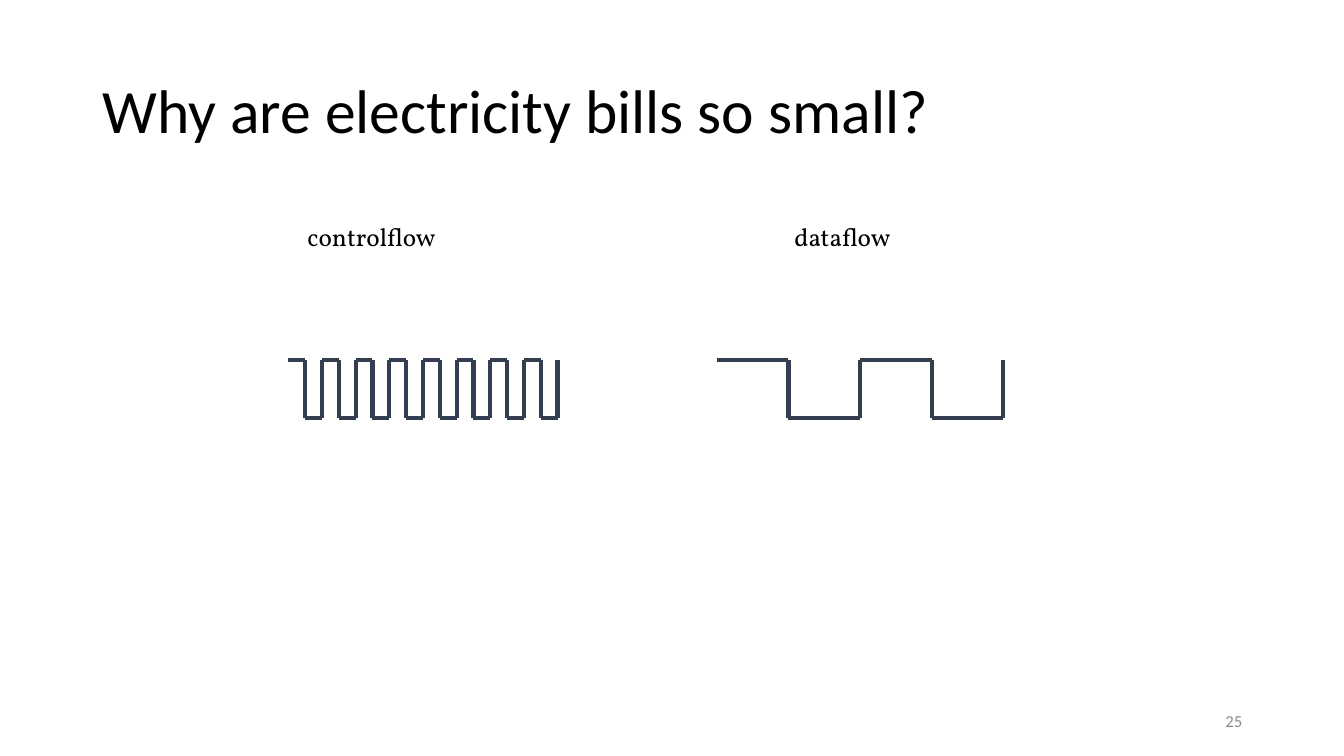
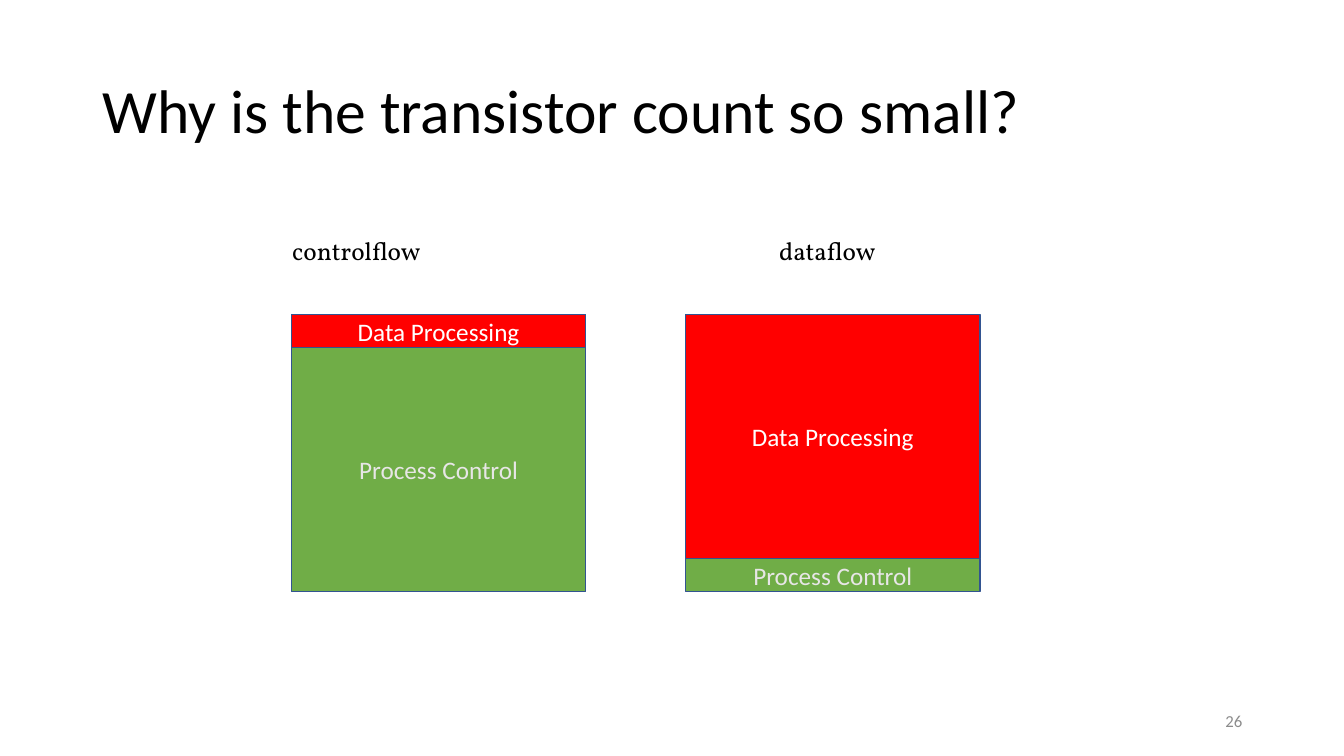
import pptx
import pptx.util
import pptx.dml.color
import pptx.enum.shapes
import pptx.enum.text
import pptx.oxml

Inches = pptx.util.Inches
Pt = pptx.util.Pt
ALIGN = pptx.enum.text.PP_ALIGN
ANCHOR = pptx.enum.text.MSO_ANCHOR

COLOURS = {
    "title": "000000",
    "label": "000000",
    "number": "8C8C8C",
    "wave": "333F50",
    "outline": "325491",
    "data": "FF0000",
    "data text": "FFFFFF",
    "control": "70AD47",
    "control text": "E7E6E6",
}
COLOURS = {name: pptx.dml.color.RGBColor.from_string(value) for name, value in COLOURS.items()}

STYLES = {
    "title": {
        "frame": {"vertical_anchor": ANCHOR.MIDDLE},
        "para": {"line_spacing": 0.9},
        "font": {"name": "Calibri", "size": Pt(44)},
    },
    "label": {
        "frame": {"vertical_anchor": ANCHOR.TOP},
        "para": {"alignment": ALIGN.LEFT},
        "font": {"name": "Vollkorn", "size": Pt(18)},
    },
    "number": {
        "frame": {"vertical_anchor": ANCHOR.MIDDLE},
        "para": {"alignment": ALIGN.RIGHT},
        "font": {"name": "Calibri", "size": Pt(12)},
    },
    "block": {
        "frame": {"vertical_anchor": ANCHOR.MIDDLE},
        "para": {"alignment": ALIGN.CENTER},
        "font": {"name": "Calibri", "size": Pt(18)},
    },
}


def write_text(box, text, style, colour):
    frame = box.text_frame
    frame.word_wrap = True
    para = frame.paragraphs[0]
    span = para.add_run()
    span.text = text
    for part, target in (("frame", frame), ("para", para), ("font", span.font)):
        for attribute, value in STYLES[style][part].items():
            setattr(target, attribute, value)
    span.font.color.rgb = COLOURS[colour]


def add_text(page, text, style, left, top, width, height):
    box = page.shapes.add_textbox(Inches(left), Inches(top), Inches(width), Inches(height))
    write_text(box, text, style, style)


deck = pptx.Presentation()
deck.slide_width = Inches(13.33)
deck.slide_height = Inches(7.5)

pages = []
for title, number, label_left, label_top in (
    ("Why are electricity bills so small?", "25", 2.95, 2.15),
    ("Why is the transistor count so small?", "26", 2.8, 2.29),
):
    page = deck.slides.add_slide(deck.slide_layouts[6])
    add_text(page, title, "title", 0.92, 0.4, 11.5, 1.45)
    add_text(page, "controlflow", "label", label_left, label_top, 2.67, 0.4)
    add_text(page, "dataflow", "label", label_left + 4.83, label_top, 1.5, 0.4)
    add_text(page, number, "number", 9.42, 6.95, 3, 0.4)
    pages.append(page)
bills_page, transistor_page = pages

WAVE_HIGH, WAVE_LOW = 3.57, 4.15
for wave_left, wave_width, steps in ((2.86, 2.67, 16), (7.11, 2.84, 4)):
    points = [(wave_left, WAVE_HIGH)]
    for step in range(steps):
        levels = (WAVE_HIGH, WAVE_LOW) if step % 2 == 0 else (WAVE_LOW, WAVE_HIGH)
        edge = wave_left + wave_width * (step + 1) / steps
        points += [(edge, level) for level in levels]
    wave = bills_page.shapes.add_group_shape()
    for start, end in zip(points, points[1:]):
        line = wave.shapes.add_connector(
            pptx.enum.shapes.MSO_CONNECTOR.STRAIGHT,
            *(Inches(value) for value in start + end),
        )
        line.line.color.rgb = COLOURS["wave"]
        line.line.width = Pt(3)
        line.element.spPr.append(pptx.oxml.parse_xml(
            '<a:effectLst xmlns:a="http://schemas.openxmlformats.org/drawingml/2006/main"/>'
        ))

STACK_TOP, STACK_WIDTH = 3.12, 2.92
SMALL, LARGE = 0.33, 2.42
for stack_left, data_height, control_height in ((2.89, SMALL, LARGE), (6.8, LARGE, SMALL)):
    for text, role, top, height in (
        ("Data Processing", "data", STACK_TOP, data_height),
        ("Process Control", "control", STACK_TOP + data_height, control_height),
    ):
        block = transistor_page.shapes.add_shape(
            pptx.enum.shapes.MSO_SHAPE.RECTANGLE,
            Inches(stack_left), Inches(top), Inches(STACK_WIDTH), Inches(height),
        )
        block.shadow.inherit = False
        block.fill.solid()
        block.fill.fore_color.rgb = COLOURS[role]
        block.line.color.rgb = COLOURS["outline"]
        block.line.width = Pt(1)
        write_text(block, text, "block", role + " text")

deck.save("out.pptx")
